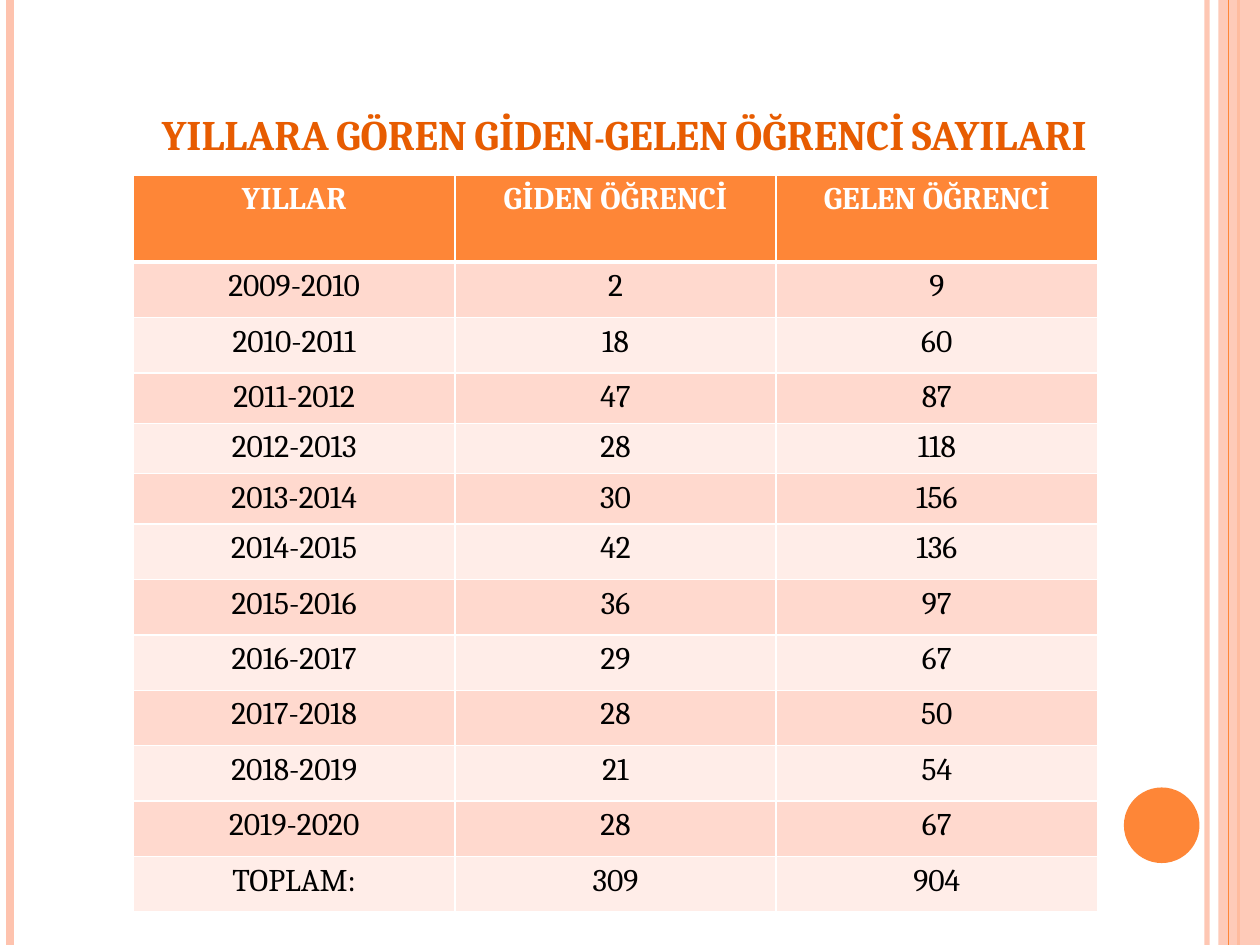
from dataclasses import dataclass

from lxml import etree
from pptx import Presentation
from pptx.dml.color import RGBColor
from pptx.enum.shapes import MSO_CONNECTOR, MSO_SHAPE
from pptx.enum.text import MSO_ANCHOR, PP_ALIGN
from pptx.oxml.ns import qn
from pptx.util import Inches, Pt

STRAIGHT = MSO_CONNECTOR.STRAIGHT
RECTANGLE, OVAL = MSO_SHAPE.RECTANGLE, MSO_SHAPE.OVAL
CENTER, BOTTOM = PP_ALIGN.CENTER, MSO_ANCHOR.BOTTOM
WIDTH, HEIGHT = 10, 7.5


@dataclass(frozen=True)
class Theme:
    font: str = "Cambria"
    title_size: float = 24
    cell_size: float = 18
    title: str = "E75C01"
    accent: str = "FE8637"
    pale: str = "FEC3AE"
    bands: tuple = ("FFD9CE", "FFEDE8")
    white: str = "FFFFFF"
    black: str = "000000"


@dataclass(frozen=True)
class Stripe:
    x: float
    color: str
    weight: float
    opacity: int = 100


@dataclass(frozen=True)
class Ornament:
    preset: int
    box: tuple
    color: str
    opacity: int = 100


THEME = Theme()
STRIPES = (
    Stripe(9.58, THEME.pale, 3, 93),
    Stripe(0.08, THEME.pale, 4.5),
    Stripe(9.83, THEME.accent, 1.5),
    Stripe(9.75, THEME.accent, 0.75),
)
BAND = Ornament(RECTANGLE, (9.67, 0, 0.33, HEIGHT), THEME.pale, 87)
DISC = Ornament(OVAL, (8.92, 6.25, 0.6, 0.6), THEME.accent)

TITLE = "YILLARA GÖREN GİDEN-GELEN ÖĞRENCİ SAYILARI"
HEADER = ("YILLAR", "GİDEN ÖĞRENCİ", "GELEN ÖĞRENCİ")
FIRST_YEAR = 2009
OUTGOING = (2, 18, 47, 28, 30, 42, 36, 29, 28, 21, 28)
INCOMING = (9, 60, 87, 118, 156, 136, 97, 67, 50, 54, 67)
TOTAL = ("TOPLAM:", 309, 904)

TABLE_LEFT, TABLE_TOP, COLUMN_WIDTH = 1.06, 1.39, 2.55
HEADER_HEIGHT, ROW_HEIGHT, SHORT_HEIGHT = 0.69, 0.44, 0.4
SHORT_ROWS = (3, 4, 5)
THIN, THICK = 1, 3


def set_opacity(fill_parent, percent: int) -> None:
    if percent < 100:
        color = next(fill_parent.iter(qn("a:srgbClr")))
        etree.SubElement(color, qn("a:alpha")).set("val", str(percent * 1000))


def format_text(text_frame, size: float, color: str, bold: bool) -> None:
    paragraph = text_frame.paragraphs[0]
    paragraph.alignment = CENTER
    font = paragraph.runs[0].font
    font.name, font.size, font.bold = THEME.font, Pt(size), bold
    font.color.rgb = RGBColor.from_string(color)


def add_stripe(slide, stripe: Stripe) -> None:
    x = Inches(stripe.x)
    connector = slide.shapes.add_connector(STRAIGHT, x, 0, x, Inches(HEIGHT))
    connector.line.color.rgb = RGBColor.from_string(stripe.color)
    connector.line.width = Pt(stripe.weight)
    properties = connector._element.spPr
    set_opacity(properties, stripe.opacity)
    etree.SubElement(properties, qn("a:effectLst"))


def add_ornament(slide, ornament: Ornament) -> None:
    box = (Inches(value) for value in ornament.box)
    shape = slide.shapes.add_shape(ornament.preset, *box)
    shape.shadow.inherit = False
    shape.fill.solid()
    shape.fill.fore_color.rgb = RGBColor.from_string(ornament.color)
    shape.line.fill.background()
    set_opacity(shape._element.spPr, ornament.opacity)


def set_borders(cell, top: float, bottom: float) -> None:
    properties = cell._tc.get_or_add_tcPr()
    weights = {"lnL": THIN, "lnR": THIN, "lnT": top, "lnB": bottom}
    for index, (side, weight) in enumerate(weights.items()):
        line = etree.Element(qn(f"a:{side}"), w=str(Pt(weight)))
        fill = etree.SubElement(line, qn("a:solidFill"))
        etree.SubElement(fill, qn("a:srgbClr")).set("val", THEME.white)
        properties.insert(index, line)


def add_title(slide) -> None:
    title = slide.shapes.title
    title.left, title.top = Inches(0.5), Inches(0.3)
    title.width, title.height = Inches(8.91), Inches(1.01)
    title.text_frame.text = TITLE
    title.text_frame.vertical_anchor = BOTTOM
    format_text(title.text_frame, THEME.title_size, THEME.title, True)
    run = title.text_frame.paragraphs[0].runs[0]
    run.font._element.set("cap", "small")


def row_height(index: int) -> float:
    if index == 0:
        return HEADER_HEIGHT
    return SHORT_HEIGHT if index in SHORT_ROWS else ROW_HEIGHT


def add_student_table(slide) -> None:
    years = [
        (f"{year}-{year + 1}", outgoing, incoming)
        for year, (outgoing, incoming) in enumerate(zip(OUTGOING, INCOMING), FIRST_YEAR)
    ]
    rows = [HEADER, *years, TOTAL]
    heights = [row_height(index) for index in range(len(rows))]
    table = slide.shapes.add_table(
        len(rows), len(HEADER), Inches(TABLE_LEFT), Inches(TABLE_TOP),
        Inches(COLUMN_WIDTH * len(HEADER)), Inches(sum(heights)),
    ).table
    for column in table.columns:
        column.width = Inches(COLUMN_WIDTH)
    for row_index, values in enumerate(rows):
        table.rows[row_index].height = Inches(heights[row_index])
        is_header = row_index == 0
        fill = THEME.accent if is_header else THEME.bands[(row_index - 1) % 2]
        color = THEME.white if is_header else THEME.black
        for column_index, value in enumerate(values):
            cell = table.cell(row_index, column_index)
            cell.text_frame.text = str(value)
            format_text(cell.text_frame, THEME.cell_size, color, is_header)
            cell.fill.solid()
            cell.fill.fore_color.rgb = RGBColor.from_string(fill)
            set_borders(
                cell,
                top=THICK if row_index == 1 else THIN,
                bottom=THICK if is_header else THIN,
            )


def main() -> None:
    presentation = Presentation()
    presentation.slide_width, presentation.slide_height = Inches(WIDTH), Inches(HEIGHT)
    slide = presentation.slides.add_slide(presentation.slide_layouts[5])

    # Side decoration: the wide band lies over all stripes but the last
    for stripe in STRIPES[:-1]:
        add_stripe(slide, stripe)
    add_ornament(slide, BAND)
    add_stripe(slide, STRIPES[-1])
    add_ornament(slide, DISC)

    # Content
    add_title(slide)
    add_student_table(slide)
    presentation.save("out.pptx")


if __name__ == "__main__":
    main()
